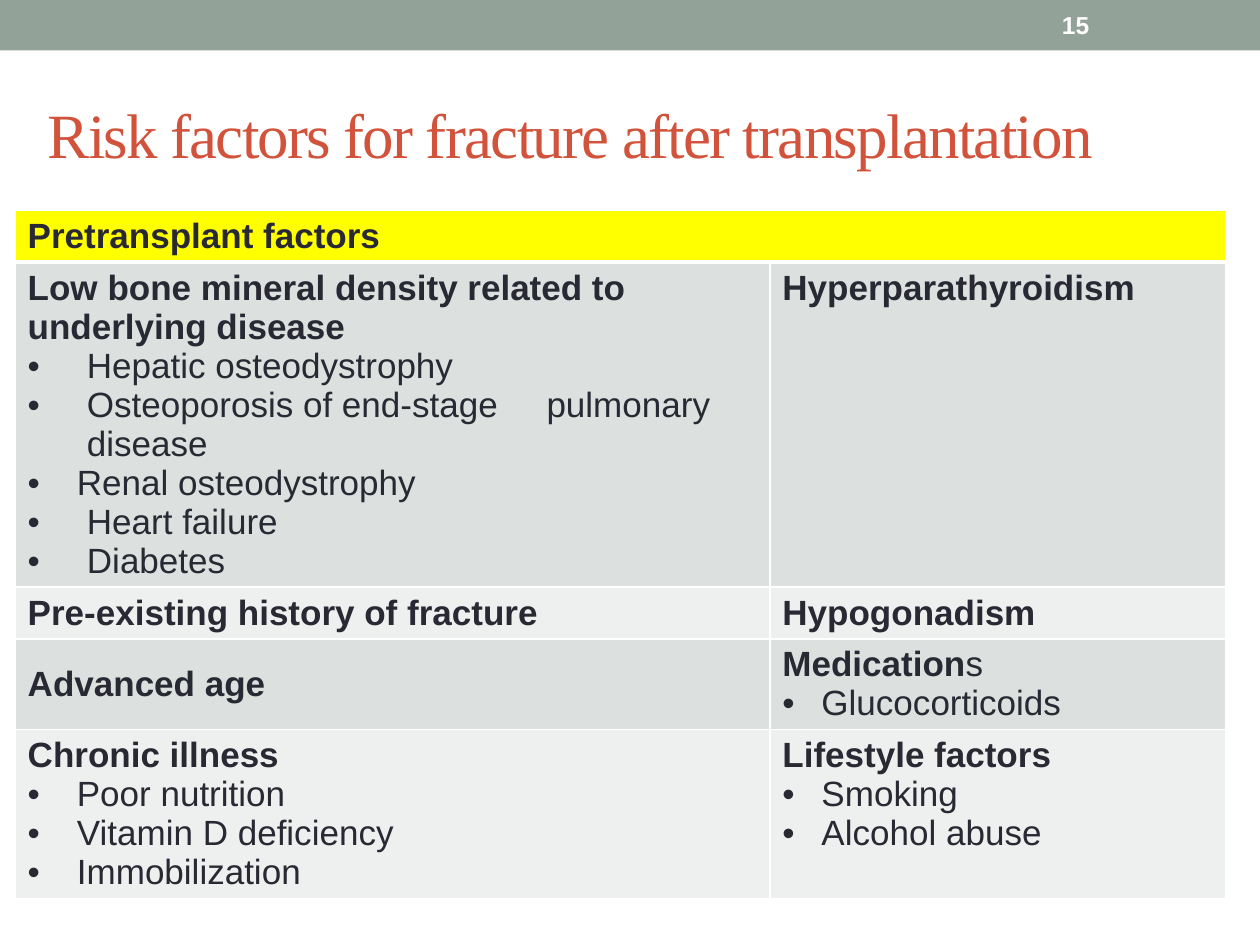
from dataclasses import dataclass

from lxml import etree
from pptx import Presentation
from pptx.dml.color import RGBColor
from pptx.enum import shapes, text
from pptx.oxml import ns
from pptx.util import Inches, Pt


@dataclass(frozen=True)
class Theme:
    banner: str = "93A299"
    title: str = "D2533C"
    ink: str = "292934"
    white: str = "FFFFFF"
    header: str = "FFFF00"
    bands: tuple = ("DCE0DE", "EEF0EF")
    title_font: str = "Times New Roman"
    body_font: str = "Arial"
    title_size: int = 36
    body_size: int = 20
    number_size: int = 14


THEME = Theme()
BODY = {"name": THEME.body_font, "size": Pt(THEME.body_size)}
HANGING = 0.31
SPACE = 0.08
WIDE_GAP = 22

COLUMN_WIDTHS = (5.99, 3.62)
ROW_HEIGHTS = (0.41, 2.57, 0.41, 0.72, 1.33)

# Each cell: heading, unbolded ending of the heading, list of (item, indent).
FACTOR_ROWS = [
    (("Low bone mineral density related to underlying disease", "", [
        ("Hepatic osteodystrophy", HANGING + 2 * SPACE),
        ("Osteoporosis of end-stage|pulmonary disease", HANGING + 2 * SPACE),
        ("Renal osteodystrophy", HANGING + SPACE),
        ("Heart failure", HANGING + 2 * SPACE),
        ("Diabetes", HANGING + 2 * SPACE)]),
     ("Hyperparathyroidism", "", [])),
    (("Pre-existing history of fracture", "", []),
     ("Hypogonadism", "", [])),
    (("Advanced age", "", []),
     ("Medication", "s", [("Glucocorticoids", HANGING)])),
    (("Chronic illness", "", [
        ("Poor nutrition", HANGING + SPACE),
        ("Vitamin D deficiency", HANGING + SPACE),
        ("Immobilization", HANGING + SPACE)]),
     ("Lifestyle factors", "", [
         ("Smoking", HANGING),
         ("Alcohol abuse", HANGING)])),
]


def set_format(target, values):
    for name, value in values.items():
        setattr(target, name, value)


def place(shape, left, top, width, height):
    set_format(shape, {"left": Inches(left), "top": Inches(top),
                       "width": Inches(width), "height": Inches(height)})


def add_run(paragraph, words, color, values, spacing=0):
    """Append formatted words; spacing is extra points between characters."""
    run = paragraph.add_run()
    run.text = words
    set_format(run.font, values)
    run.font.color.rgb = RGBColor.from_string(color)
    if spacing:
        run.font._element.set("spc", str(spacing * 100))


def add_bullet(paragraph, indent):
    properties = paragraph._p.get_or_add_pPr()
    properties.set("marL", str(Inches(indent)))
    properties.set("indent", str(-Inches(indent)))
    etree.SubElement(properties, ns.qn("a:buFont"), typeface=THEME.body_font)
    etree.SubElement(properties, ns.qn("a:buChar"), char="•")


def set_borders(cell, bottom=1):
    properties = cell._tc.get_or_add_tcPr()
    widths = {"lnL": 1, "lnR": 1, "lnT": 1, "lnB": bottom}
    for position, (side, width) in enumerate(widths.items()):
        line = etree.Element(ns.qn(f"a:{side}"), w=str(Pt(width)))
        fill = etree.SubElement(line, ns.qn("a:solidFill"))
        etree.SubElement(fill, ns.qn("a:srgbClr"), val=THEME.white)
        properties.insert(position, line)


def style_cell(cell, color, anchor, bottom=1):
    cell.fill.solid()
    cell.fill.fore_color.rgb = RGBColor.from_string(color)
    cell.vertical_anchor = anchor
    set_borders(cell, bottom)


def fill_cell(cell, heading, ending="", items=()):
    frame = cell.text_frame
    paragraph = frame.paragraphs[0]
    add_run(paragraph, heading, THEME.ink, {**BODY, "bold": True})
    regular = {**BODY, "bold": False}
    if ending:
        add_run(paragraph, ending, THEME.ink, regular)
    for item, indent in items:
        paragraph = frame.add_paragraph()
        add_bullet(paragraph, indent)
        first, gap, rest = item.partition("|")
        add_run(paragraph, first, THEME.ink, regular)
        if gap:
            add_run(paragraph, " ", THEME.ink, regular, WIDE_GAP)
            add_run(paragraph, rest, THEME.ink, regular)


def add_banner(slide):
    banner = slide.shapes.add_shape(shapes.MSO_SHAPE.RECTANGLE, 0, 0,
                                    Inches(10), Inches(0.4))
    banner.shadow.inherit = False
    banner.fill.solid()
    banner.fill.fore_color.rgb = RGBColor.from_string(THEME.banner)
    banner.line.fill.background()


def add_title(slide, words):
    title = slide.shapes.title
    place(title, 0.28, 0.58, 9.45, 0.96)
    set_format(title.text_frame, {"word_wrap": True,
                                  "auto_size": text.MSO_AUTO_SIZE.NONE,
                                  "vertical_anchor": text.MSO_ANCHOR.MIDDLE})
    paragraph = title.text_frame.paragraphs[0]
    paragraph.alignment = text.PP_ALIGN.LEFT
    add_run(paragraph, words, THEME.title,
            {"name": THEME.title_font, "size": Pt(THEME.title_size)}, -1)


def add_factor_table(slide):
    frame = slide.shapes.add_table(
        len(ROW_HEIGHTS), len(COLUMN_WIDTHS), Inches(0.12), Inches(1.67),
        Inches(sum(COLUMN_WIDTHS)), Inches(sum(ROW_HEIGHTS)))
    table = frame.table
    set_format(table, {"first_row": False, "horz_banding": False})
    for column, width in zip(table.columns, COLUMN_WIDTHS):
        column.width = Inches(width)
    for row, height in zip(table.rows, ROW_HEIGHTS):
        row.height = Inches(height)

    header = table.cell(0, 0)
    header.merge(table.cell(0, 1))
    for cell in table.rows[0].cells:
        style_cell(cell, THEME.header, text.MSO_ANCHOR.TOP, bottom=3)
    fill_cell(header, "Pretransplant factors")

    anchors = (text.MSO_ANCHOR.MIDDLE, text.MSO_ANCHOR.TOP)
    for index, factors in enumerate(FACTOR_ROWS):
        for column, content in enumerate(factors):
            cell = table.cell(index + 1, column)
            style_cell(cell, THEME.bands[index % 2], anchors[column])
            fill_cell(cell, *content)


def add_slide_number(slide, number):
    box = slide.shapes.add_textbox(0, 0, 0, 0)
    place(box, 8.33, 0.02, 1.17, 0.36)
    set_format(box.text_frame, {"word_wrap": True,
                                "vertical_anchor": text.MSO_ANCHOR.MIDDLE})
    add_run(box.text_frame.paragraphs[0], number, THEME.white,
            {"name": THEME.body_font, "size": Pt(THEME.number_size),
             "bold": True})


def main():
    presentation = Presentation()
    set_format(presentation, {"slide_width": Inches(10),
                              "slide_height": Inches(7.5)})
    slide = presentation.slides.add_slide(presentation.slide_layouts[5])
    add_banner(slide)
    add_title(slide, "Risk factors for fracture after transplantation")
    add_factor_table(slide)
    add_slide_number(slide, "15")
    presentation.save("out.pptx")


if __name__ == "__main__":
    main()
